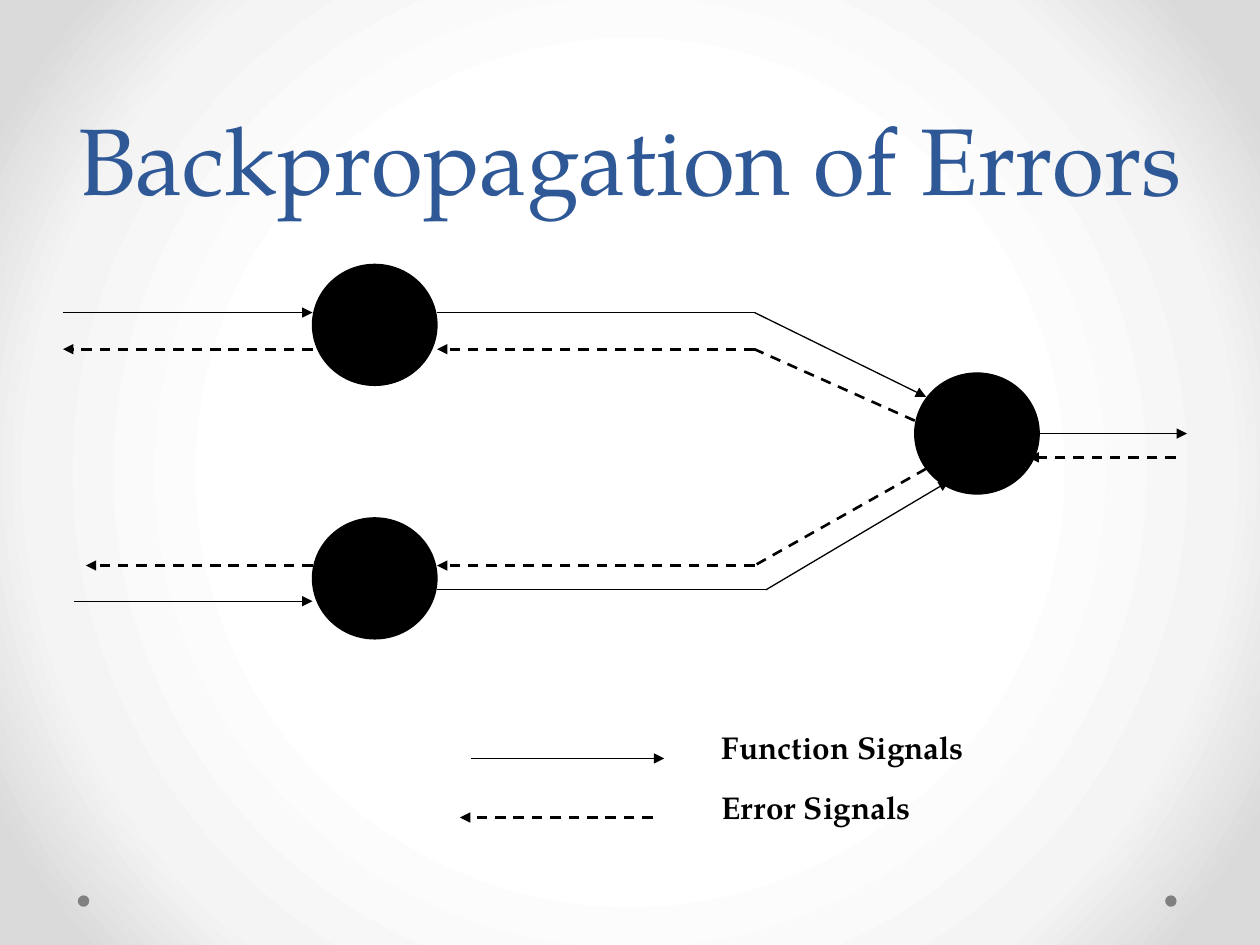
from dataclasses import dataclass

from lxml.etree import SubElement
from pptx import Presentation
from pptx.dml.color import RGBColor
from pptx.enum.dml import MSO_LINE
from pptx.enum.shapes import MSO_CONNECTOR, MSO_SHAPE
from pptx.enum.text import MSO_ANCHOR, MSO_AUTO_SIZE, PP_ALIGN
from pptx.oxml.ns import qn
from pptx.slide import Slide
from pptx.util import Cm, Pt

FONT = "TeX Gyre Pagella"
BLACK, BLUE, GRAY = "000000", "2F5897", "808080"
NODE_W, NODE_H = 2.51, 2.44
DOT = 0.23


@dataclass
class Circle:
    x: float
    y: float
    w: float = NODE_W
    h: float = NODE_H
    color: str = BLACK
    outlined: bool = True


@dataclass
class Signal:
    points: list[tuple[float, float]]
    error: bool = False


@dataclass
class Label:
    text: str
    x: float
    y: float
    w: float
    h: float = 1.17


HIDDEN_X, OUTPUT_X = 6.3, 18.44
HIDDEN_RIGHT, OUTPUT_RIGHT = HIDDEN_X + NODE_W, OUTPUT_X + NODE_W
BEND_X = 15.21
TOP_FUNCTION_Y, TOP_ERROR_Y = 6.3, 7.04
BOTTOM_ERROR_Y, BOTTOM_FUNCTION_Y, BOTTOM_INPUT_Y = 11.4, 11.89, 12.12
LEGEND_FUNCTION_Y, LEGEND_ERROR_Y = 15.29, 16.48

CIRCLES = [
    Circle(23.49, 18.05, DOT, DOT, GRAY, False),
    Circle(1.57, 18.05, DOT, DOT, GRAY, False),
    Circle(HIDDEN_X, 5.33),
    Circle(OUTPUT_X, 7.52),
    Circle(HIDDEN_X, 10.44),
]

SIGNALS = [
    Signal([(1.27, TOP_FUNCTION_Y), (HIDDEN_X, TOP_FUNCTION_Y)]),
    Signal([(1.5, BOTTOM_INPUT_Y), (HIDDEN_X, BOTTOM_INPUT_Y)]),
    Signal([(HIDDEN_RIGHT, TOP_FUNCTION_Y), (BEND_X, TOP_FUNCTION_Y), (18.67, 8)]),
    Signal([(HIDDEN_RIGHT, BOTTOM_FUNCTION_Y), (15.44, BOTTOM_FUNCTION_Y), (19.13, 9.7)]),
    Signal([(OUTPUT_RIGHT, 8.74), (23.93, 8.74)]),
    Signal([(23.7, 9.22), (20.73, 9.22)], True),
    Signal([(OUTPUT_X, 8.48), (BEND_X, TOP_ERROR_Y), (HIDDEN_RIGHT, TOP_ERROR_Y)], True),
    Signal([(18.67, 9.45), (BEND_X, BOTTOM_ERROR_Y), (HIDDEN_RIGHT, BOTTOM_ERROR_Y)], True),
    Signal([(HIDDEN_X, TOP_ERROR_Y), (1.27, TOP_ERROR_Y)], True),
    Signal([(HIDDEN_X, BOTTOM_ERROR_Y), (1.73, BOTTOM_ERROR_Y)], True),
    Signal([(9.5, LEGEND_FUNCTION_Y), (13.39, LEGEND_FUNCTION_Y)]),
    Signal([(13.16, LEGEND_ERROR_Y), (9.27, LEGEND_ERROR_Y)], True),
]

LABELS = [
    Label("Function Signals", 14.3, 14.55, 7.09),
    Label("Error Signals", 14.3, 15.77, 4.85),
]


def rgb(value: str) -> RGBColor:
    return RGBColor.from_string(value)


def paint_background(s: Slide) -> None:
    fill = s.background.fill
    fill.gradient()
    grad = s.background._cSld.find(".//" + qn("a:gradFill"))
    for child in list(grad):
        grad.remove(child)
    stops = SubElement(grad, qn("a:gsLst"))
    for position, color in [(50, "FFFFFF"), (76, "F4F4F4"), (92, "DADADA")]:
        stop = SubElement(stops, qn("a:gs"), pos=str(position * 1000))
        SubElement(stop, qn("a:srgbClr"), val=color)
    path = SubElement(grad, qn("a:path"), path="circle")
    sides = {side: "50000" for side in "ltrb"}
    SubElement(path, qn("a:fillToRect"), sides)


def add_title(s: Slide, text: str) -> None:
    sp = s.shapes.title
    sp.left, sp.top, sp.width, sp.height = Cm(1.27), Cm(0), Cm(22.86), Cm(4.45)
    tf = sp.text_frame
    tf.text = text
    tf.auto_size = MSO_AUTO_SIZE.NONE
    tf.vertical_anchor = MSO_ANCHOR.BOTTOM
    p = tf.paragraphs[0]
    p.alignment = PP_ALIGN.CENTER
    p.line_spacing = Pt(58)
    r = p.runs[0]
    r.font.name, r.font.size = FONT, Pt(54)
    r.font.color.rgb = rgb(BLUE)


def add_circle(s: Slide, c: Circle) -> None:
    sp = s.shapes.add_shape(MSO_SHAPE.OVAL, Cm(c.x), Cm(c.y), Cm(c.w), Cm(c.h))
    sp.shadow.inherit = False
    sp.fill.solid()
    sp.fill.fore_color.rgb = rgb(c.color)
    if c.outlined:
        sp.line.color.rgb = rgb(c.color)
        sp.line.width = Pt(0.75)
    else:
        sp.line.fill.background()


def add_signal(s: Slide, signal: Signal) -> None:
    for start, end in zip(signal.points, signal.points[1:]):
        ends = [Cm(v) for v in (*start, *end)]
        cxn = s.shapes.add_connector(MSO_CONNECTOR.STRAIGHT, *ends)
        cxn.line.color.rgb = rgb(BLACK)
        cxn.line.width = Pt(1.5 if signal.error else 0.75)
        if signal.error:
            cxn.line.dash_style = MSO_LINE.DASH
        if end == signal.points[-1]:
            SubElement(cxn.line._get_or_add_ln(), qn("a:tailEnd"), type="triangle")
        SubElement(cxn._element.spPr, qn("a:effectLst"))


def add_label(s: Slide, label: Label) -> None:
    sp = s.shapes.add_textbox(Cm(label.x), Cm(label.y), Cm(label.w), Cm(label.h))
    tf = sp.text_frame
    tf.word_wrap = True
    tf.text = label.text
    r = tf.paragraphs[0].runs[0]
    r.font.name, r.font.size, r.font.bold = FONT, Pt(18), True
    r.font.color.rgb = rgb(BLACK)


def main() -> None:
    prs = Presentation()
    prs.slide_width, prs.slide_height = Cm(25.4), Cm(19.05)
    s = prs.slides.add_slide(prs.slide_layouts[5])
    paint_background(s)
    add_title(s, "Backpropagation of Errors")
    for circle in CIRCLES:
        add_circle(s, circle)
    for signal in SIGNALS:
        add_signal(s, signal)
    for label in LABELS:
        add_label(s, label)
    prs.save("out.pptx")


if __name__ == "__main__":
    main()
